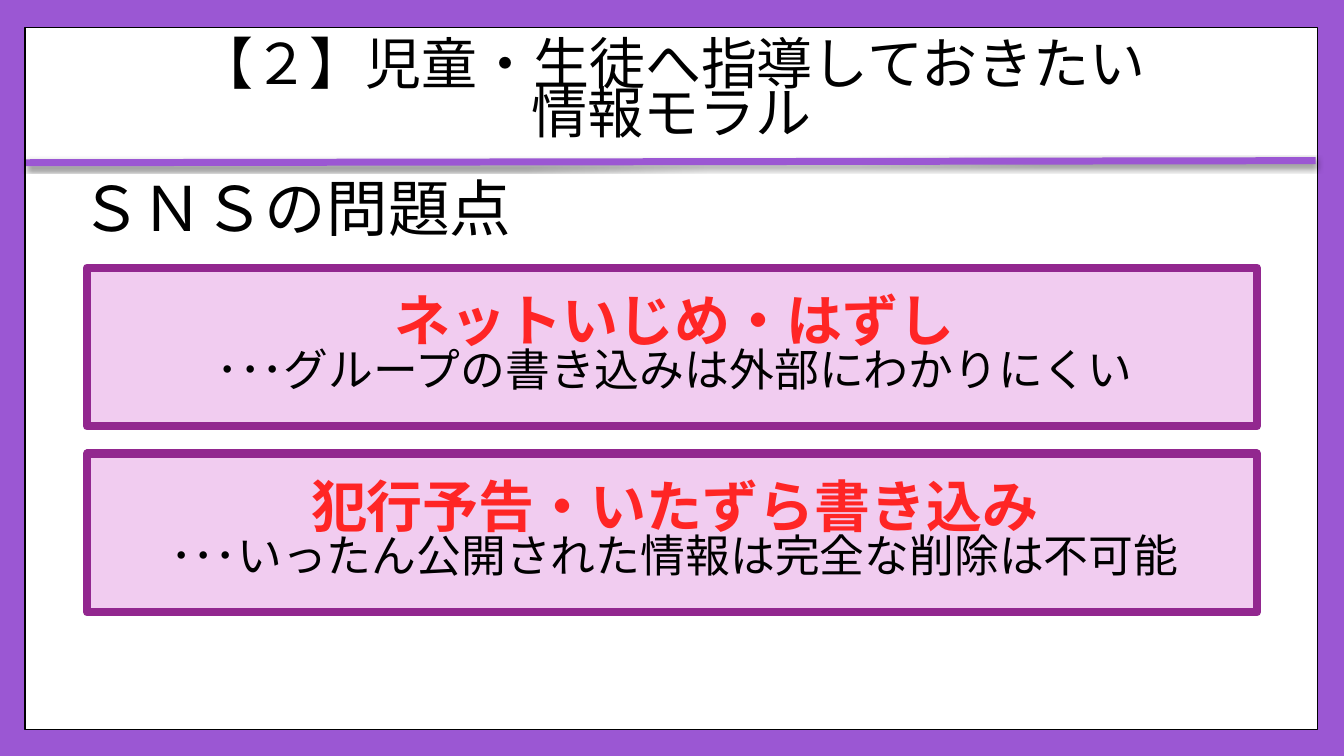
from lxml.etree import SubElement
from pptx import Presentation
from pptx.dml.color import RGBColor
from pptx.enum.shapes import MSO_CONNECTOR as CONN, MSO_SHAPE as SHAPE
from pptx.enum.text import MSO_ANCHOR as ANCHOR, MSO_AUTO_SIZE as AUTO, PP_ALIGN as ALIGN
from pptx.oxml.ns import qn
from pptx.util import Emu, Pt

PURPLE = RGBColor(0x9B, 0x57, 0xD3)
PLUM = RGBColor(0x92, 0x27, 0x8F)
PINK = RGBColor(0xF1, 0xCC, 0xF0)
RED = RGBColor(0xFF, 0x25, 0x25)
BLACK = RGBColor(0, 0, 0)
WHITE = RGBColor(0xFF, 0xFF, 0xFF)

EMU_PER_PX = 9525
TITLE_ONLY = 5

CARDS = [
    ("ネットいじめ・はずし", "･･･グループの書き込みは外部にわかりにくい"),
    ("犯行予告・いたずら書き込み", "･･･いったん公開された情報は完全な削除は不可能"),
]
CARD_TOP, CARD_HEIGHT, CARD_STEP = 255, 151, 177


def px(n):
    return Emu(n * EMU_PER_PX)


def write(p, text, size, font="Arial", color=BLACK, bold=False,
          align=ALIGN.LEFT, spacing=0.8, indent=0):
    p.alignment = align
    p.line_spacing = spacing
    p.space_before = p.space_after = Pt(0)
    pPr = p._p.get_or_add_pPr()
    pPr.set("marL", str(px(indent)))
    pPr.set("indent", "0")
    for i, line in enumerate(text.split("\n")):
        if i:
            p.add_line_break()
        r = p.add_run()
        r.text = line
        r.font.size = Pt(size)
        r.font.name = font
        r.font.bold = bold
        r.font.color.rgb = color
        rPr = r._r.get_or_add_rPr()
        rPr.set("lang", "ja-JP")
        SubElement(rPr, qn("a:ea"), typeface=font)


class Deck:
    def __init__(self, width, height, background):
        self.prs = Presentation()
        self.prs.slide_width, self.prs.slide_height = px(width), px(height)
        layout = self.prs.slide_layouts[TITLE_ONLY]
        self.slide = self.prs.slides.add_slide(layout)
        fill = self.slide.background.fill
        fill.solid()
        fill.fore_color.rgb = background

    def title(self, text, x, y, w, h):
        sp = self.slide.shapes.title
        sp.left, sp.top, sp.width, sp.height = map(px, (x, y, w, h))
        tf = sp.text_frame
        tf.auto_size = AUTO.NONE
        tf.word_wrap = True
        tf.vertical_anchor = ANCHOR.MIDDLE
        write(tf.paragraphs[0], text, 40, font="Cabin",
              align=ALIGN.CENTER, spacing=0.73)

    def box(self, x, y, w, h, fill, line, weight):
        sp = self.slide.shapes.add_shape(SHAPE.RECTANGLE, *map(px, (x, y, w, h)))
        sp.shadow.inherit = False
        sp.fill.solid()
        sp.fill.fore_color.rgb = fill
        sp.line.color.rgb = line
        sp.line.width = Pt(weight)
        return sp

    def frame(self, x, y, w, h):
        sp = self.box(x, y, w, h, WHITE, BLACK, 1)
        tree = self.slide.shapes._spTree
        tree.remove(sp._element)
        tree.insert(2, sp._element)

    def rule(self, x1, y1, x2, y2, color, weight):
        line = self.slide.shapes.add_connector(CONN.STRAIGHT, *map(px, (x1, y1, x2, y2)))
        line.line.color.rgb = color
        line.line.width = Pt(weight)
        effects = SubElement(line._element.spPr, qn("a:effectLst"))
        shadow = SubElement(effects, qn("a:outerShdw"), blurRad=str(Pt(3)),
                            dist=str(Pt(2)), dir="5400000", rotWithShape="0")
        black = SubElement(shadow, qn("a:srgbClr"), val=str(BLACK))
        SubElement(black, qn("a:alpha"), val="45000")

    def heading(self, text, x, y, w, h):
        tf = self.slide.shapes.add_textbox(*map(px, (x, y, w, h))).text_frame
        tf.word_wrap = True
        write(tf.paragraphs[0], text, 44, spacing=0.78, indent=5)

    def card(self, topic, detail, x, y, w, h):
        tf = self.box(x, y, w, h, PINK, PLUM, 6).text_frame
        tf.word_wrap = True
        tf.vertical_anchor = ANCHOR.MIDDLE
        write(tf.paragraphs[0], topic, 40, color=RED, bold=True,
              align=ALIGN.CENTER, indent=5)
        write(tf.add_paragraph(), detail, 32, font="Noto Sans CJK JP",
              align=ALIGN.CENTER, indent=5)


def main():
    deck = Deck(1280, 720, PURPLE)
    deck.frame(24, 26, 1231, 669)
    deck.rule(25, 155, 1253, 153, PURPLE, 5)
    deck.title("【２】児童・生徒へ指導しておきたい\n情報モラル", 25, 35, 1229, 109)
    deck.heading("ＳＮＳの問題点", 62, 172, 1152, 513)
    for i, (topic, detail) in enumerate(CARDS):
        deck.card(topic, detail, 83, CARD_TOP + i * CARD_STEP, 1114, CARD_HEIGHT)
    deck.prs.save("out.pptx")


if __name__ == "__main__":
    main()
